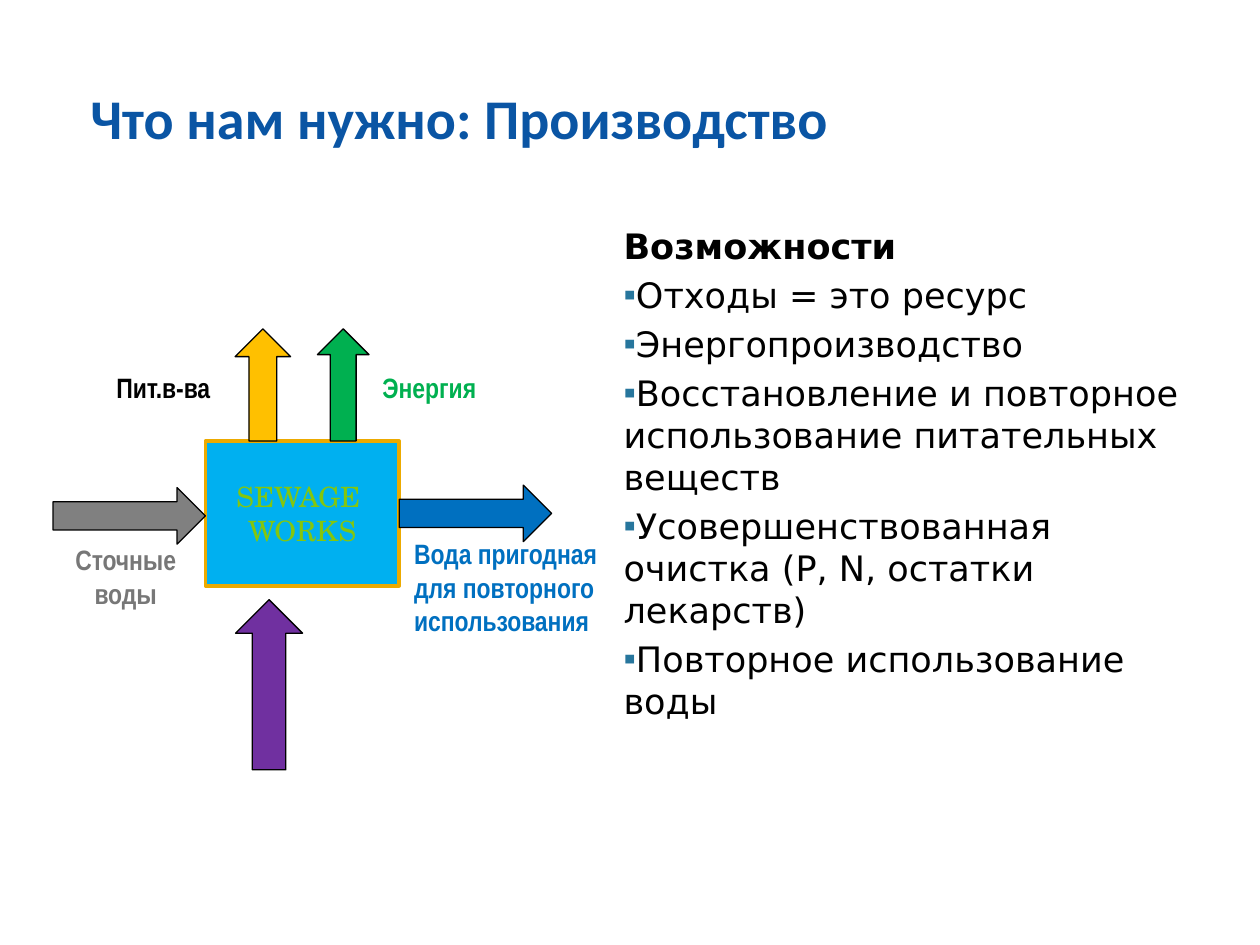
from dataclasses import dataclass

from lxml.etree import SubElement
from pptx import Presentation
from pptx.dml.color import RGBColor
from pptx.enum.shapes import MSO_SHAPE
from pptx.enum.text import MSO_ANCHOR, MSO_AUTO_SIZE, PP_ALIGN
from pptx.oxml.ns import qn
from pptx.slide import Slide
from pptx.text.text import TextFrame, _Paragraph
from pptx.util import Cm, Pt

BLACK = RGBColor(0x00, 0x00, 0x00)
TITLE_BLUE = RGBColor(0x0A, 0x55, 0xA4)
BULLET_BLUE = RGBColor(0x27, 0x76, 0x9D)
WORKS_BLUE = RGBColor(0x00, 0xB0, 0xF0)
WORKS_BORDER = RGBColor(0xEC, 0xAA, 0x00)
WORKS_GREEN = RGBColor(0x84, 0xC6, 0x0E)
SEWAGE_GRAY = RGBColor(0x80, 0x80, 0x80)
LABEL_GRAY = RGBColor(0x77, 0x77, 0x77)
WATER_BLUE = RGBColor(0x00, 0x70, 0xC0)
ENERGY_GREEN = RGBColor(0x00, 0xB0, 0x50)
NUTRIENT_YELLOW = RGBColor(0xFF, 0xC0, 0x00)
INPUT_PURPLE = RGBColor(0x70, 0x30, 0xA0)


@dataclass(frozen=True)
class Box:
    left: float
    top: float
    width: float
    height: float

    def lengths(self) -> tuple[Cm, Cm, Cm, Cm]:
        return Cm(self.left), Cm(self.top), Cm(self.width), Cm(self.height)


@dataclass(frozen=True)
class Flow:
    direction: MSO_SHAPE
    box: Box
    color: RGBColor


@dataclass(frozen=True)
class Label:
    text: str
    box: Box
    color: RGBColor
    alignment: PP_ALIGN = PP_ALIGN.CENTER


@dataclass(frozen=True)
class TextStyle:
    font: str
    size: int
    color: RGBColor
    bold: bool = False


WORKS = Box(4.14, 8.89, 3.91, 2.92)
FLOWS = (
    Flow(MSO_SHAPE.RIGHT_ARROW, Box(1.07, 9.83, 3.07, 1.14), SEWAGE_GRAY),
    Flow(MSO_SHAPE.RIGHT_ARROW, Box(8.05, 9.78, 3.07, 1.14), WATER_BLUE),
    Flow(MSO_SHAPE.UP_ARROW, Box(6.4, 6.63, 1.04, 2.26), ENERGY_GREEN),
    Flow(MSO_SHAPE.UP_ARROW, Box(4.74, 6.63, 1.12, 2.26), NUTRIENT_YELLOW),
    Flow(MSO_SHAPE.UP_ARROW, Box(4.75, 12.09, 1.35, 3.43), INPUT_PURPLE),
)
LABELS = (
    Label("Сточные воды", Box(0.81, 10.82, 3.45, 1.63), LABEL_GRAY),
    Label("Пит.в-ва", Box(1.57, 7.34, 3.45, 0.94), BLACK),
    Label("Вода пригодная для повторного использования",
          Box(8.1, 10.69, 4.19, 3), WATER_BLUE, PP_ALIGN.LEFT),
    Label("Энергия", Box(6.93, 7.34, 3.45, 0.94), ENERGY_GREEN),
)
OPPORTUNITIES = (
    "Отходы = это ресурс",
    "Энергопроизводство",
    "Восстановление и повторное использование питательных веществ",
    "Усовершенствованная очистка (P, N, остатки лекарств)",
    "Повторное использование воды",
)


def add_text(paragraph: _Paragraph, text: str, style: TextStyle) -> None:
    run = paragraph.add_run()
    run.text = text
    run.font.name = style.font
    run.font.size = Pt(style.size)
    run.font.bold = style.bold
    run.font.color.rgb = style.color


def set_margins(frame: TextFrame, side: float, edge: float) -> None:
    frame.margin_left = frame.margin_right = Cm(side)
    frame.margin_top = frame.margin_bottom = Cm(edge)


def set_bullet(paragraph: _Paragraph, symbol: str = "") -> None:
    properties = paragraph._p.get_or_add_pPr()
    properties.set("marL", "0")
    properties.set("indent", "0")
    if symbol:
        color = SubElement(properties, qn("a:buClr"))
        SubElement(color, qn("a:srgbClr"), val=str(BULLET_BLUE))
        SubElement(properties, qn("a:buChar"), char=symbol)
    else:
        SubElement(properties, qn("a:buNone"))


def place(shape, box: Box) -> None:
    shape.left, shape.top, shape.width, shape.height = box.lengths()


def fill_title(slide: Slide) -> None:
    title = slide.shapes.title
    place(title, Box(1.57, 1.32, 23.52, 3))
    frame = title.text_frame
    frame.auto_size = MSO_AUTO_SIZE.NONE
    frame.vertical_anchor = MSO_ANCHOR.TOP
    set_margins(frame, 0.25, 0.13)
    heading = frame.paragraphs[0]
    heading.alignment = PP_ALIGN.LEFT
    heading.line_spacing = 1.18
    add_text(heading, "Что нам нужно: Производство",
             TextStyle("Calibri", 32, TITLE_BLUE, True))


def fill_opportunities(slide: Slide) -> None:
    body = slide.placeholders[1]
    place(body, Box(12.34, 4.42, 12.24, 11.38))
    frame = body.text_frame
    frame.auto_size = MSO_AUTO_SIZE.NONE
    set_margins(frame, 0.23, 0.1)
    heading = frame.paragraphs[0]
    set_bullet(heading)
    heading.space_before = Pt(0)
    add_text(heading, "Возможности", TextStyle("DejaVu Sans", 20, BLACK, True))
    for opportunity in OPPORTUNITIES:
        item = frame.add_paragraph()
        set_bullet(item, "▪")
        item.space_before = Pt(4)
        add_text(item, opportunity, TextStyle("DejaVu Sans", 20, BLACK))


def add_solid(slide: Slide, kind: MSO_SHAPE, box: Box, fill: RGBColor,
              border: RGBColor, border_width: float):
    solid = slide.shapes.add_shape(kind, *box.lengths())
    solid.shadow.inherit = False
    solid.fill.solid()
    solid.fill.fore_color.rgb = fill
    solid.line.color.rgb = border
    solid.line.width = Pt(border_width)
    return solid


def add_works(slide: Slide) -> None:
    works = add_solid(slide, MSO_SHAPE.RECTANGLE, WORKS, WORKS_BLUE, WORKS_BORDER, 2)
    frame = works.text_frame
    frame.word_wrap = False
    frame.vertical_anchor = MSO_ANCHOR.MIDDLE
    style = TextStyle("TeX Gyre Schola", 16, WORKS_GREEN)
    for paragraph, word in ((frame.paragraphs[0], "SEWAGE "),
                            (frame.add_paragraph(), "WORKS")):
        paragraph.alignment = PP_ALIGN.CENTER
        add_text(paragraph, word, style)


def add_label(slide: Slide, label: Label) -> None:
    frame = slide.shapes.add_textbox(*label.box.lengths()).text_frame
    frame.word_wrap = True
    frame.auto_size = MSO_AUTO_SIZE.SHAPE_TO_FIT_TEXT
    paragraph = frame.paragraphs[0]
    paragraph.alignment = label.alignment
    add_text(paragraph, label.text, TextStyle("Arial Narrow", 16, label.color, True))


def main() -> None:
    presentation = Presentation()
    presentation.slide_width = Cm(25.4)
    presentation.slide_height = Cm(19.05)
    slide = presentation.slides.add_slide(presentation.slide_layouts[1])
    fill_title(slide)
    fill_opportunities(slide)
    add_works(slide)
    for flow in FLOWS:
        add_solid(slide, flow.direction, flow.box, flow.color, BLACK, 0.75)
    for label in LABELS:
        add_label(slide, label)
    presentation.save("out.pptx")


if __name__ == "__main__":
    main()
